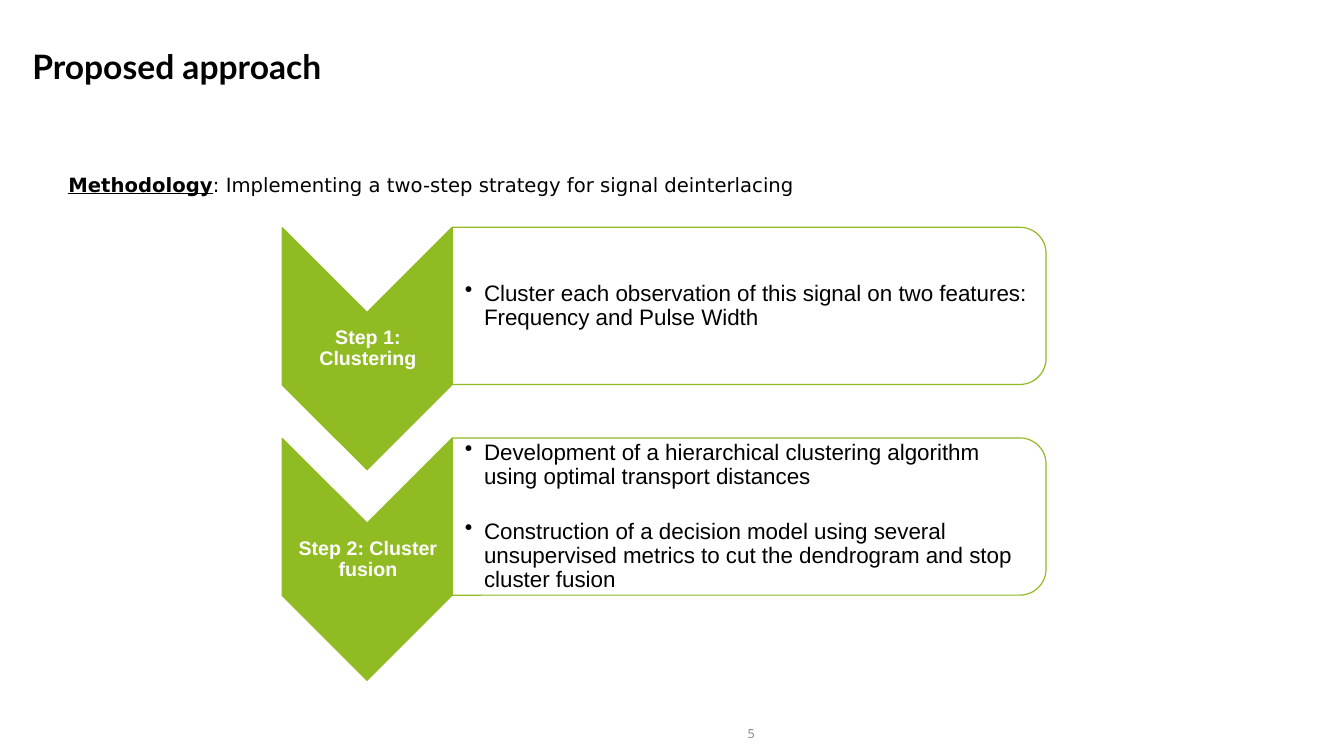
from lxml import etree
from pptx import Presentation
from pptx.dml.color import RGBColor
from pptx.enum.shapes import MSO_SHAPE
from pptx.enum.text import MSO_ANCHOR, PP_ALIGN
from pptx.oxml.ns import qn
from pptx.util import Inches, Pt

COLORS = {"green": "90BB23", "white": "FFFFFF", "black": "000000", "gray": "818181"}

TITLE = {"name": "Lato", "size": Pt(24), "bold": True}
METHOD = {"name": "DejaVu Sans", "size": Pt(14)}
STEP = {"name": "Arial", "size": Pt(14), "bold": True}
DETAIL = {"name": "Arial", "size": Pt(16)}
NUMBER = {"name": "Open Sans", "size": Pt(9)}

STEPS = [
    ("Step 1: Clustering",
     ["Cluster each observation of this signal on two features: "
      "Frequency and Pulse Width"]),
    ("Step 2: Cluster fusion",
     ["Development of a hierarchical clustering algorithm using optimal "
      "transport distances",
      "Construction of a decision model using several unsupervised metrics "
      "to cut the dendrogram and stop cluster fusion"]),
]
STEP_TOP, STEP_PITCH = 2.25, 2.09


def rgb(color):
    return RGBColor.from_string(COLORS[color])


def set_attrs(obj, values):
    for name, value in values.items():
        setattr(obj, name, value)


def set_font(font, style, color="black"):
    set_attrs(font, style)
    font.color.rgb = rgb(color)


def add_text(s, box, lines, style, color="black", margins=(0.1, 0.05, 0.1, 0.05),
             anchor=MSO_ANCHOR.MIDDLE, wrap=True, **para):
    tf = s.shapes.add_textbox(*map(Inches, box)).text_frame
    set_attrs(tf, {"word_wrap": wrap, "vertical_anchor": anchor})
    for side, margin in zip(("left", "top", "right", "bottom"), margins):
        setattr(tf, f"margin_{side}", Inches(margin))
    for i, line in enumerate(lines):
        p = tf.paragraphs[0] if i == 0 else tf.add_paragraph()
        set_attrs(p, para)
        r = p.add_run()
        r.text = line
        set_font(r.font, style, color)
    return tf


def add_turned_shape(s, kind, box, fill):
    """Add a preset turned a quarter clockwise; box is its place before turning."""
    sp = s.shapes.add_shape(kind, *map(Inches, box))
    sp.rotation = 90
    sp.shadow.inherit = False
    sp.fill.solid()
    sp.fill.fore_color.rgb = rgb(fill)
    sp.line.color.rgb = rgb("green")
    sp.line.width = Pt(0.85)
    return sp


def set_opacity(sp, percent):
    color = sp.fill._xPr.find(qn("a:solidFill"))[0]
    etree.SubElement(color, qn("a:alpha"), val=str(percent * 1000))


def add_bullet(p):
    pPr = p._p.get_or_add_pPr()
    pPr.set("marL", str(Inches(0.19)))
    pPr.set("indent", str(-Inches(0.19)))
    etree.SubElement(pPr, qn("a:buChar"), char="•")


def add_step(s, top, name, details):
    add_turned_shape(s, MSO_SHAPE.CHEVRON, (2.44, top + 0.37, 2.4, 1.68), "green")
    add_text(s, (2.81, top + 0.85, 1.68, 0.72), [name], STEP, "white",
             margins=[0.01] * 4, alignment=PP_ALIGN.CENTER, line_spacing=0.9)
    panel = add_turned_shape(s, MSO_SHAPE.ROUND_2_SAME_RECTANGLE,
                             (6.65, top - 2.16, 1.56, 5.89), "white")
    set_opacity(panel, 90)
    tf = add_text(s, (4.49, top + 0.08, 5.81, 1.41), details, DETAIL,
                  margins=(0.12, 0.01, 0.01, 0.01), line_spacing=0.9)
    for i, p in enumerate(tf.paragraphs):
        if i:
            p.space_before = Pt(22)
        add_bullet(p)


def add_title(s, text):
    title = s.shapes.title
    set_attrs(title, {"left": Inches(0.22), "top": Inches(0.41),
                      "width": Inches(12.73), "height": Inches(0.83)})
    tf = title.text_frame
    tf.text = text
    tf.vertical_anchor = MSO_ANCHOR.TOP
    p = tf.paragraphs[0]
    p.alignment = PP_ALIGN.LEFT
    set_font(p.runs[0].font, TITLE)


def add_methodology(s):
    tf = add_text(s, (0.58, 1.67, 7.48, 0.34),
                  ["Methodology"], METHOD, anchor=MSO_ANCHOR.TOP, wrap=False)
    p = tf.paragraphs[0]
    set_attrs(p.runs[0].font, {"bold": True, "underline": True})
    r = p.add_run()
    r.text = ": Implementing a two-step strategy for signal deinterlacing"
    set_font(r.font, METHOD)


def main():
    prs = Presentation()
    prs.slide_width, prs.slide_height = Inches(13.33), Inches(7.5)
    s = prs.slides.add_slide(prs.slide_layouts[5])
    add_title(s, "Proposed approach")
    add_methodology(s)
    for i, (name, details) in enumerate(STEPS):
        add_step(s, STEP_TOP + i * STEP_PITCH, name, details)
    add_text(s, (7, 7.15, 0.9, 0.26), ["5"], NUMBER, "gray",
             alignment=PP_ALIGN.CENTER)
    prs.save("out.pptx")


if __name__ == "__main__":
    main()
